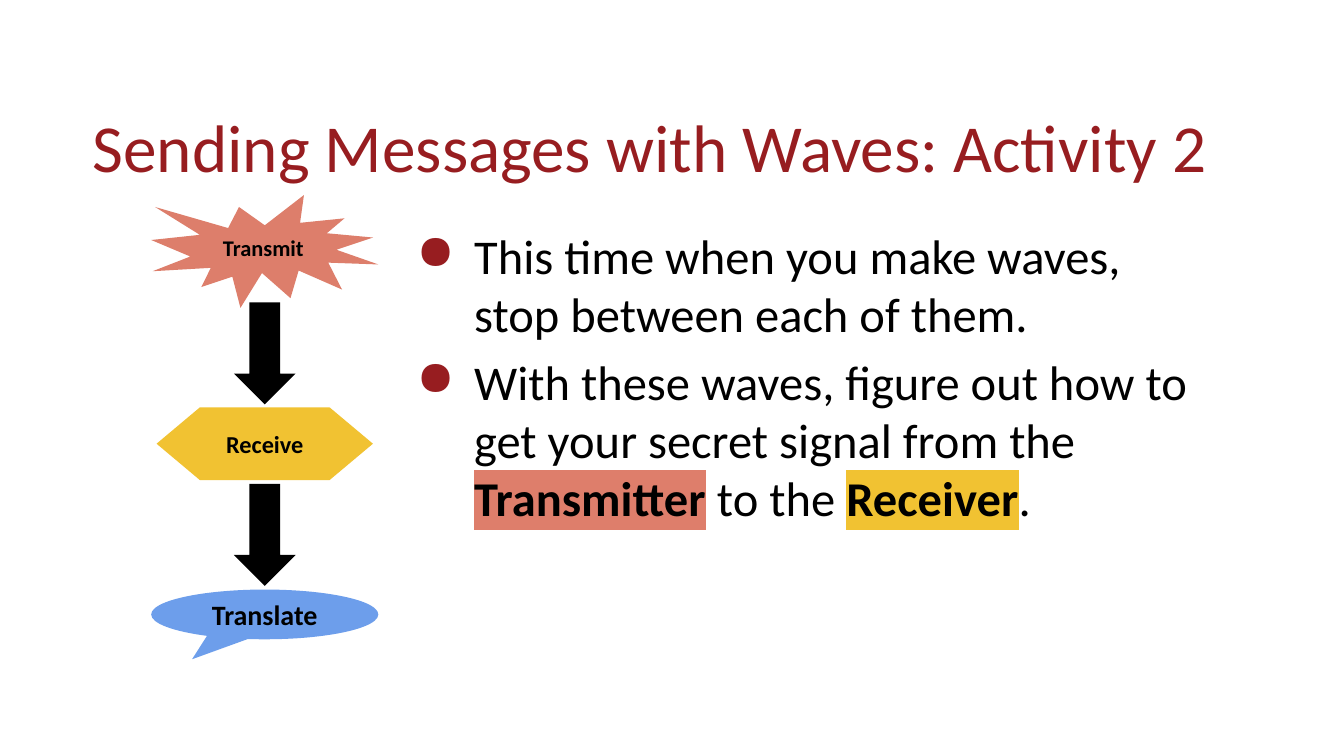
"""Build the slide on sending messages with waves."""
import pptx
import pptx.util
import pptx.dml.color
import pptx.enum.shapes
import pptx.enum.text
import pptx.oxml
import pptx.oxml.ns

RGBColor = pptx.dml.color.RGBColor
SHAPE = pptx.enum.shapes.MSO_SHAPE
ANCHOR = pptx.enum.text.MSO_ANCHOR
ALIGN = pptx.enum.text.PP_ALIGN
Pt = pptx.util.Pt
Inches = pptx.util.Inches

WIDTH = 10
HEIGHT = WIDTH * 9 / 16
COL, ROW = WIDTH / 100, HEIGHT / 100
FLOW_CENTER = 19.7
FONT = "Calibri"
BLACK = RGBColor(0x00, 0x00, 0x00)
MAROON = RGBColor(0x97, 0x1D, 0x20)
CORAL = RGBColor(0xDD, 0x7E, 0x6B)
CORAL_MARK = RGBColor(0xDE, 0x7E, 0x6B)
GOLD = RGBColor(0xF1, 0xC2, 0x32)
BLUE = RGBColor(0x6D, 0x9E, 0xEB)


def box(col, row, cols, rows):
    return [Inches(v) for v in (col * COL, row * ROW, cols * COL, rows * ROW)]


def set_frame(tf, anchor, insets):
    tf.word_wrap = True
    tf.vertical_anchor = anchor
    tf.margin_left, tf.margin_top, tf.margin_right, tf.margin_bottom = map(Inches, insets)


def format_run(r, size, color, bold=False):
    r.font.size, r.font.bold, r.font.name = Pt(size), bold, FONT
    r.font.color.rgb = color


def color_element(tag, color):
    ns = pptx.oxml.ns.nsdecls("a")
    return pptx.oxml.parse_xml(f'<a:{tag} {ns}><a:srgbClr val="{color}"/></a:{tag}>')


def highlight(r, color):
    fill = r._r.rPr.find(pptx.oxml.ns.qn("a:solidFill"))
    fill.addnext(color_element("highlight", color))


def add_bullet(p):
    pPr = p._p.get_or_add_pPr()
    pPr.set("marL", str(Inches(0.5)))
    pPr.set("indent", str(Inches(-0.43)))
    pPr.append(color_element("buClr", MAROON))
    ns = pptx.oxml.ns.nsdecls("a")
    pPr.append(pptx.oxml.parse_xml(f'<a:buChar {ns} char="●"/>'))


def add_title(s, text):
    tf = s.shapes.add_textbox(*box(6.9, 5.33, 86.2, 19.38)).text_frame
    set_frame(tf, ANCHOR.BOTTOM, (0, 0.05, 0, 0))
    p = tf.paragraphs[0]
    p.text = text
    p.line_spacing = 0.9
    format_run(p.runs[0], 36, MAROON)


def add_bullets(s, items):
    tf = s.shapes.add_textbox(*box(29.3, 29, 60.6, 48.7)).text_frame
    set_frame(tf, ANCHOR.TOP, (0.1, 0.05, 0.1, 0.05))
    for i, parts in enumerate(items):
        p = tf.add_paragraph() if i else tf.paragraphs[0]
        add_bullet(p)
        if i:
            p.space_before = Pt(5.2)
        for text, mark in parts:
            r = p.add_run()
            r.text = text
            format_run(r, 26, BLACK, mark is not None)
            if mark is not None:
                highlight(r, mark)


def add_flow_shape(group, kind, row, cols, rows, fill, adjustments=()):
    sp = group.shapes.add_shape(kind, *box(FLOW_CENTER - cols / 2, row, cols, rows))
    sp.shadow.inherit = False
    sp.fill.solid()
    sp.fill.fore_color.rgb = fill
    sp.line.fill.background()
    for i, value in enumerate(adjustments):
        sp.adjustments[i] = value
    return sp


def add_step(group, text, size, *look):
    sp = add_flow_shape(group, *look)
    tf = sp.text_frame
    set_frame(tf, ANCHOR.MIDDLE, (0.1, 0.1, 0.1, 0.1))
    tf.text = text
    p = tf.paragraphs[0]
    p.alignment = ALIGN.CENTER
    format_run(p.runs[0], size, BLACK, True)


def add_flow(s):
    group = s.shapes.add_group_shape()
    for row in (40, 64):
        add_flow_shape(group, SHAPE.DOWN_ARROW, row, 4.6, 13.5, BLACK)
    add_step(group, "Translate", 15, SHAPE.OVAL_CALLOUT, 78, 16.9, 6.58, BLUE, (-0.32, 0.9))
    add_step(group, "Transmit", 12, SHAPE.EXPLOSION1, 25.8, 16.9, 14.93, CORAL)
    add_step(group, "Receive", 13, SHAPE.FLOWCHART_PREPARATION, 53.9, 16.1, 9.6, GOLD)


def main():
    prs = pptx.Presentation()
    prs.slide_width, prs.slide_height = Inches(WIDTH), Inches(HEIGHT)
    s = prs.slides.add_slide(prs.slide_layouts[6])
    add_title(s, "Sending Messages with Waves: Activity 2")
    add_flow(s)
    add_bullets(s, [
        [("This time when you make waves, stop between each of them.", None)],
        [("With these waves, figure out how to get your secret signal from the ", None),
         ("Transmitter", CORAL_MARK), (" to the ", None), ("Receiver", GOLD), (".", None)],
    ])
    prs.save("out.pptx")


if __name__ == "__main__":
    main()
